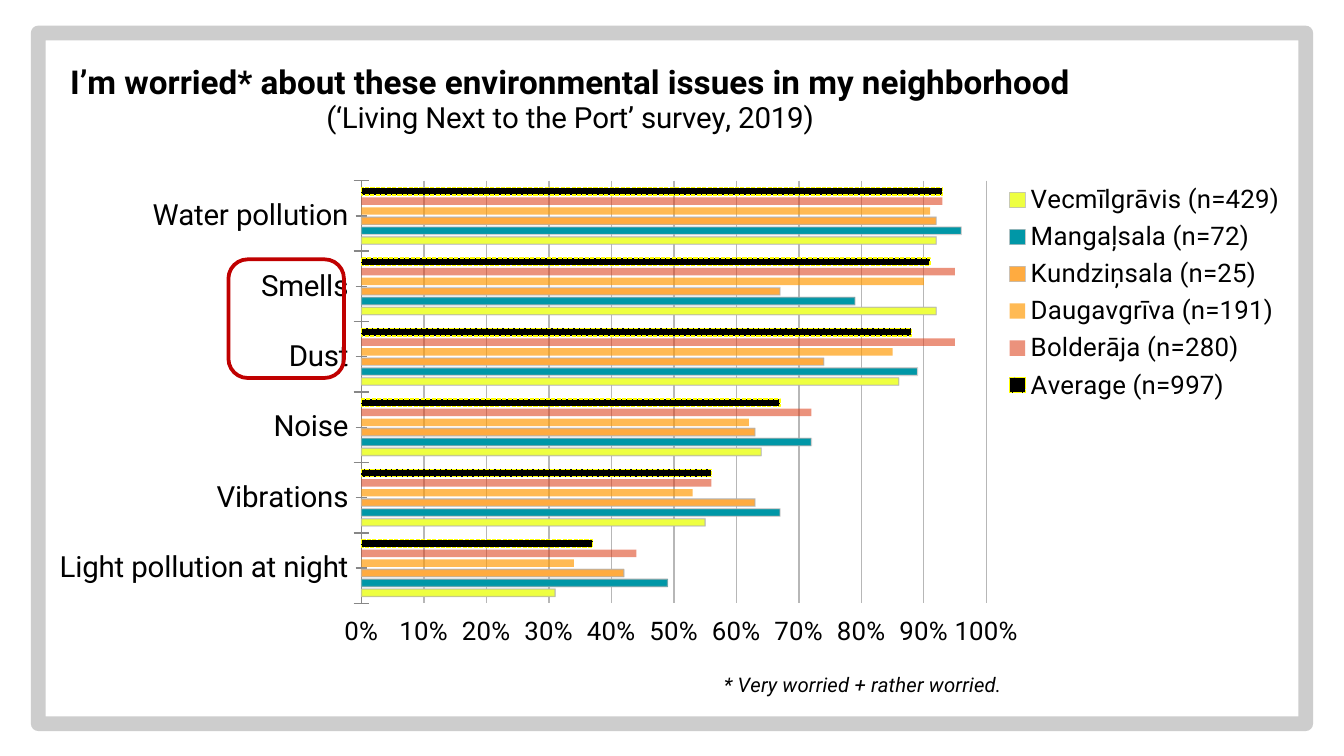
from dataclasses import dataclass
from typing import Any, Optional

from lxml.etree import SubElement
from pptx import Presentation
from pptx.chart.chart import Chart
from pptx.chart.data import CategoryChartData
from pptx.dml.color import RGBColor
from pptx.enum.chart import XL_CHART_TYPE as ChartType
from pptx.enum.chart import XL_LEGEND_POSITION as LegendPosition
from pptx.enum.chart import XL_TICK_LABEL_POSITION as LabelPosition
from pptx.enum.chart import XL_TICK_MARK as TickMark
from pptx.enum.dml import MSO_LINE as LineDash
from pptx.enum.shapes import MSO_SHAPE as Preset
from pptx.oxml import parse_xml
from pptx.oxml.ns import nsdecls, qn
from pptx.util import Inches, Pt

BLACK = RGBColor(0x00, 0x00, 0x00)
YELLOW = RGBColor(0xFF, 0xFF, 0x00)
SALMON = RGBColor(0xDC, 0x39, 0x12)
ORANGE = RGBColor(0xFF, 0x99, 0x00)
AMBER = RGBColor(0xFF, 0xAB, 0x40)
TEAL = RGBColor(0x00, 0x97, 0xA7)
LIME = RGBColor(0xEE, 0xFF, 0x41)
EDGE_GRAY = RGBColor(0xB2, 0xB2, 0xB2)
GRID_GRAY = RGBColor(0xB7, 0xB7, 0xB7)
AXIS_GRAY = RGBColor(0x87, 0x87, 0x87)
RED = RGBColor(0xC0, 0x00, 0x00)
FONT = "Roboto"
SLIDE_WIDTH = Inches(10)
SLIDE_HEIGHT = SLIDE_WIDTH * 9 // 16
ISSUES = ["Water pollution", "Smells", "Dust", "Noise", "Vibrations", "Light pollution at night"]


@dataclass(frozen=True)
class Box:
    """Position and size in percent of the slide or chart."""

    left: float
    top: float
    width: Optional[float] = None
    height: Optional[float] = None

    def on_slide(self) -> tuple[int, int, int, int]:
        """Return the box in slide lengths."""
        return (int(self.left * SLIDE_WIDTH / 100), int(self.top * SLIDE_HEIGHT / 100),
                int(self.width * SLIDE_WIDTH / 100), int(self.height * SLIDE_HEIGHT / 100))


@dataclass(frozen=True)
class District:
    """Survey answers of one district, with its bar style."""

    name: str
    percents: tuple[int, ...]
    color: RGBColor
    opacity: int = 100
    edge: Optional[RGBColor] = None
    edge_opacity: int = 100
    dash: LineDash = LineDash.SOLID


DISTRICTS = [
    District("Average (n=997)", (93, 91, 88, 67, 56, 37), BLACK, edge=YELLOW, dash=LineDash.SQUARE_DOT),
    District("Bolderāja (n=280)", (93, 95, 95, 72, 56, 44), SALMON, 55),
    District("Daugavgrīva (n=191)", (91, 90, 85, 62, 53, 34), ORANGE, 67),
    District("Kundziņsala (n=25)", (92, 67, 74, 63, 63, 42), AMBER, 100, EDGE_GRAY, 66),
    District("Mangaļsala (n=72)", (96, 79, 89, 72, 67, 49), TEAL, 100, EDGE_GRAY, 62),
    District("Vecmīlgrāvis (n=429)", (92, 92, 86, 64, 55, 31), LIME, 100, EDGE_GRAY, 67),
]


def apply(target: Any, formats: dict[str, Any]) -> None:
    """Set each named attribute on the target."""
    for name, value in formats.items():
        setattr(target, name, value)


def font_format(size: float, bold: bool = False, italic: bool = False) -> dict[str, Any]:
    """Return the font values for one text."""
    return {"name": FONT, "size": Pt(size), "bold": bold, "italic": italic}


def set_opacity(properties: Any, percent: int) -> None:
    """Give the colours below an element their opacity."""
    if percent < 100:
        for color in properties.iter(qn("a:srgbClr")):
            SubElement(color, qn("a:alpha"), val=str(percent * 1000))


def place_part(part: Any, box: Box, inner: bool = False) -> None:
    """Give a chart part a manual layout."""
    for old in part.findall(qn("c:layout")):
        part.remove(old)
    values = [("x", box.left), ("y", box.top), ("w", box.width), ("h", box.height)]
    known = [(key, value / 100) for key, value in values if value is not None]
    target = '<c:layoutTarget val="inner"/>' if inner else ""
    modes = "".join(f'<c:{key}Mode val="edge"/>' for key, _ in known if key in "xy")
    sizes = "".join(f'<c:{key} val="{value:.4f}"/>' for key, value in known)
    layout = parse_xml(f'<c:layout {nsdecls("c")}><c:manualLayout>{target}{modes}{sizes}'
                       "</c:manualLayout></c:layout>")
    leading = [child for child in part if child.tag in (qn("c:tx"), qn("c:legendPos"))]
    part.insert(len(leading), layout)


def style_district(series: Any, district: District) -> None:
    """Colour the bars of one district."""
    series.invert_if_negative = False
    fill, line = series.format.fill, series.format.line
    fill.solid()
    fill.fore_color.rgb = district.color
    properties = series._element.find(qn("c:spPr"))
    set_opacity(properties, district.opacity)
    if district.edge is None:
        line.fill.background()
        return
    line.color.rgb = district.edge
    apply(line, {"width": Pt(0.75), "dash_style": district.dash})
    set_opacity(properties.find(qn("a:ln")), district.edge_opacity)


def style_axes(chart: Chart) -> None:
    """Format both axes and the footnote below them."""
    issues, shares = chart.category_axis, chart.value_axis
    ticks = {"major_tick_mark": TickMark.CROSS, "minor_tick_mark": TickMark.CROSS}
    apply(issues, {**ticks, "reverse_order": True})
    apply(shares, {**ticks, "minimum_scale": 0, "maximum_scale": 1, "major_unit": 0.1,
                   "has_major_gridlines": True, "tick_label_position": LabelPosition.HIGH})
    apply(shares.tick_labels, {"number_format": "###0%", "number_format_is_linked": False})
    apply(issues.tick_labels.font, font_format(16))
    apply(shares.tick_labels.font, font_format(14))
    issues.format.line.color.rgb = AXIS_GRAY
    shares.format.line.fill.background()
    grid = shares.major_gridlines.format.line
    grid.color.rgb = GRID_GRAY
    grid.width = Pt(0.75)
    footnote = shares.axis_title.text_frame.paragraphs[0].add_run()
    footnote.text = "* Very worried + rather worried."
    apply(footnote.font, font_format(11, italic=True))


def write_title(chart: Chart) -> None:
    """Write the two-line chart title."""
    frame = chart.chart_title.text_frame
    headline = frame.paragraphs[0].add_run()
    headline.text = "I’m worried* about these environmental issues in my neighborhood"
    apply(headline.font, font_format(18, bold=True))
    survey = frame.add_paragraph().add_run()
    survey.text = "(‘Living Next to the Port’ survey, 2019)"
    apply(survey.font, font_format(16))


def add_frame(chart: Chart) -> None:
    """Draw the thick border around the chart."""
    border = parse_xml(
        f'<c:spPr {nsdecls("c", "a")}><a:solidFill><a:srgbClr val="FFFFFF"/></a:solidFill>'
        f'<a:ln w="{Pt(8)}"><a:solidFill><a:srgbClr val="{EDGE_GRAY}"/></a:solidFill>'
        "<a:round/></a:ln></c:spPr>")
    set_opacity(border.find(qn("a:ln")), 64)
    chart.element.find(qn("c:chart")).addnext(border)


def add_survey_chart(slide: Any, box: Box) -> None:
    """Add the bar chart of worries by district."""
    answers = CategoryChartData(number_format="0%")
    answers.categories = [issue.replace(" ", chr(160)) for issue in ISSUES]
    for district in DISTRICTS:
        answers.add_series(district.name, [percent / 100 for percent in district.percents])
    chart = slide.shapes.add_chart(ChartType.BAR_CLUSTERED, *box.on_slide(), answers).chart
    apply(chart.font, font_format(10))
    chart.font.color.rgb = BLACK
    apply(chart.plots[0], {"gap_width": 183, "overlap": -32, "vary_by_categories": False})
    for series, district in zip(chart.plots[0].series, DISTRICTS):
        style_district(series, district)
    style_axes(chart)
    write_title(chart)
    chart.has_legend = True
    apply(chart.legend, {"position": LegendPosition.RIGHT, "include_in_layout": False})
    apply(chart.legend.font, font_format(14))
    add_frame(chart)
    root = chart.element.find(qn("c:chart"))
    plot = root.find(qn("c:plotArea"))
    place_part(plot, Box(25.5, 21.4, 49.3, 61.2), inner=True)
    place_part(root.find(qn("c:title")), Box(2.2, 3.6))
    place_part(plot.find(qn("c:valAx")).find(qn("c:title")), Box(53.8, 91.9))
    place_part(root.find(qn("c:legend")), Box(76.3, 21.1, 22, 33))


def add_highlight(slide: Any, box: Box) -> None:
    """Outline the highlighted issues."""
    highlight = slide.shapes.add_shape(Preset.ROUNDED_RECTANGLE, *box.on_slide())
    highlight.shadow.inherit = False
    highlight.fill.background()
    apply(highlight.line, {"width": Pt(2)})
    highlight.line.color.rgb = RED


def main() -> None:
    """Build and save the slide."""
    deck = Presentation()
    apply(deck, {"slide_width": SLIDE_WIDTH, "slide_height": SLIDE_HEIGHT})
    slide = deck.slides.add_slide(deck.slide_layouts[6])
    add_survey_chart(slide, Box(2.3, 3.4, 95.4, 93.3))
    add_highlight(slide, Box(17, 34.3, 8.6, 15.7))
    deck.save("out.pptx")


if __name__ == "__main__":
    main()
